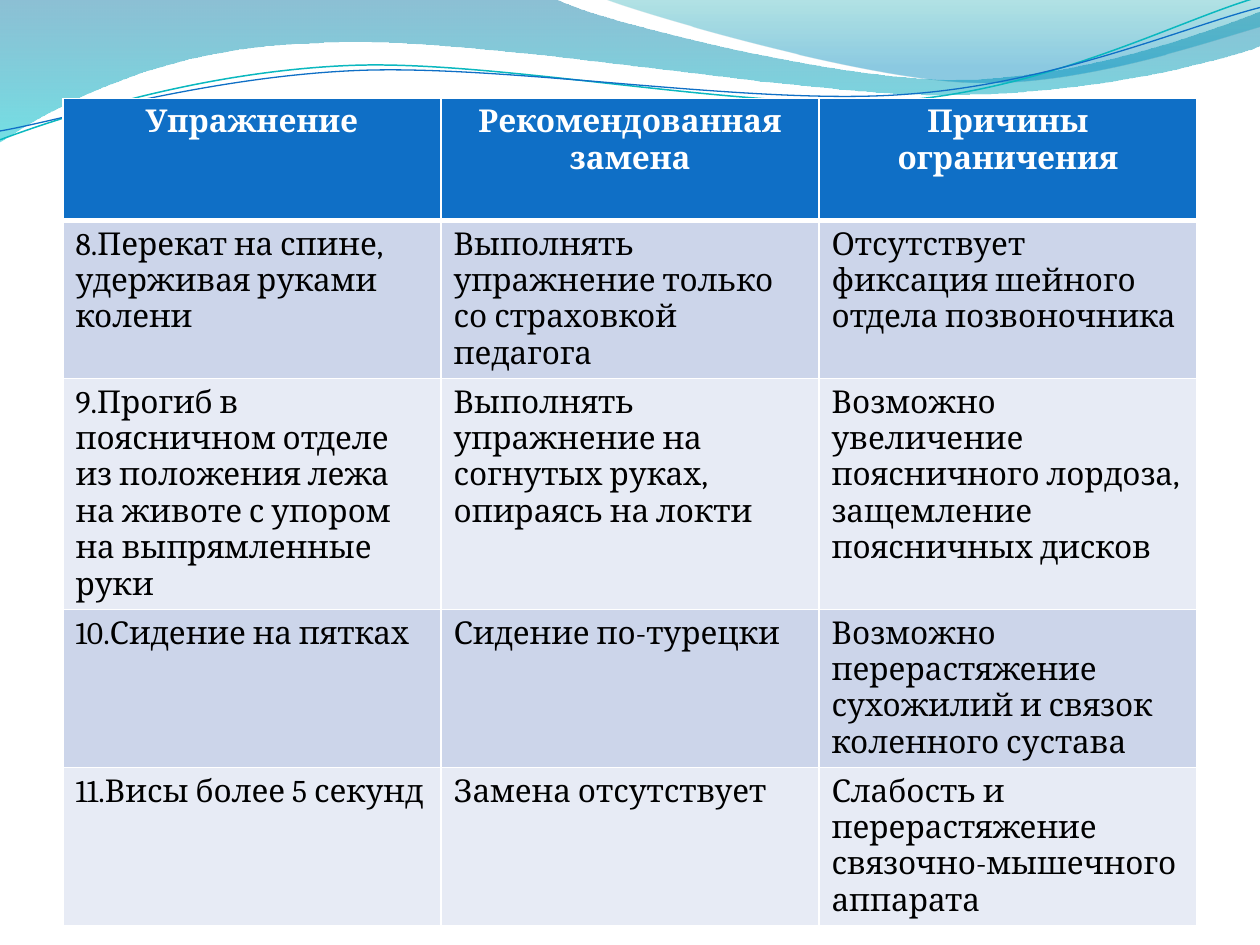
from math import cos, radians, sin

from lxml.etree import SubElement
from pptx import Presentation
from pptx.dml.color import RGBColor
from pptx.enum.text import PP_ALIGN
from pptx.oxml.ns import qn
from pptx.util import Inches, Pt

HEADINGS = ["Упражнение", "Рекомендованная замена", "Причины ограничения"]
EXERCISES = [
    ["8.Перекат на спине, удерживая руками колени",
     "Выполнять упражнение только со страховкой педагога",
     "Отсутствует фиксация шейного отдела позвоночника"],
    ["9.Прогиб в поясничном отделе из положения лежа на животе с упором на выпрямленные руки",
     "Выполнять упражнение на согнутых руках, опираясь на локти",
     "Возможно увеличение поясничного лордоза, защемление поясничных дисков"],
    ["10.Сидение на пятках", "Сидение по-турецки",
     "Возможно перерастяжение сухожилий и связок коленного сустава"],
    ["11.Висы более 5 секунд", "Замена отсутствует",
     "Слабость и перерастяжение связочно-мышечного аппарата"],
]
ROW_HEIGHTS = [0.97, 1.25, 1.83, 1.25, 1.25]

WIDE_WAVE = [[(0, 0)], [(4.4, -0.01)], [(4.76, 0.17), (6.64, 0.63), (7.58, 0.63)],
             [(8.53, 0.63), (9.58, 0.26), (10, 0.09)], [(10.01, 0.36)],
             [(9.83, 0.44), (8.7, 0.76), (7.46, 0.75)],
             [(6.22, 0.75), (3.82, 0.28), (2.57, 0.34)],
             [(1.29, 0.36), (0.46, 0.83), (-0.01, 1.13)], [(0, 0)]]
RIGHT_WAVE = [[(4.79, -0.01)], [(5.09, 0.11), (6.82, 0.62), (7.69, 0.65)],
              [(8.56, 0.69), (9.61, 0.32), (10, 0.21)], [(10, 0)], [(4.79, -0.01)]]
TEAL_CURVE = [[(0, 1.11)], [(0.48, 0.93), (1.58, 0.57), (2.77, 0.52)],
              [(3.95, 0.47), (5.93, 0.89), (7.13, 0.8)],
              [(8.33, 0.71), (9.38, 0.15), (9.98, -0.02)]]
BLUE_CURVE = [[(0, 1.04)], [(0.47, 0.96), (1.64, 0.61), (2.83, 0.56)],
              [(4.03, 0.51), (5.97, 0.84), (7.17, 0.75)],
              [(8.36, 0.67), (9.41, 0.21), (10, 0.06)]]


def color(value):
    return RGBColor.from_string(value)


def turn(segments, degrees, center):
    angle, (cx, cy) = radians(degrees), center
    return [[(cx + (x - cx) * cos(angle) - (y - cy) * sin(angle),
              cy + (x - cx) * sin(angle) + (y - cy) * cos(angle)) for x, y in segment]
            for segment in segments]


class WaveSlide:
    """Draws the wave header and the exercise table in one style."""

    font, size = "Cambria", 18
    accent, bands = "0F6FC6", ("CCD5EA", "E7EBF5")
    tilt = 2.7

    def __init__(self, slide):
        self.slide = slide

    def outline(self, segments, close):
        start, *ends = [(Inches(x), Inches(y)) for x, y in (part[-1] for part in segments)]
        builder = self.slide.shapes.build_freeform(*start)
        builder.add_line_segments(ends, close=close)
        outline = builder.convert_to_shape()
        outline.shadow.inherit = False
        lines = list(outline._element.spPr.iter(qn("a:lnTo")))
        for line, segment in zip(lines, segments[1:]):
            if len(segment) == 3:
                self.bend(line, segment, outline.left, outline.top)
        return outline

    def bend(self, line, segment, left, top):
        path = line.getparent()
        bend = SubElement(path, qn("a:cubicBezTo"))
        for x, y in segment:
            SubElement(bend, qn("a:pt"), x=str(Inches(x) - left), y=str(Inches(y) - top))
        path.replace(line, bend)

    def wave(self, segments, stops):
        wave = self.outline(segments, True)
        wave.line.fill.background()
        wave.fill.gradient()
        wave.fill.gradient_angle = 270
        for stop, (position, shade, _) in zip(wave.fill.gradient_stops, stops):
            stop.position = position
            stop.color.rgb = color(shade)
        shades = list(wave._element.spPr.iter(qn("a:srgbClr")))
        for shade, (_, _, opacity) in zip(shades, stops):
            SubElement(shade, qn("a:alpha")).set("val", str(opacity * 1000))

    def curve(self, segments, center, shade, width):
        curve = self.outline(turn(segments, self.tilt, center), False)
        curve.rotation = 360 - self.tilt
        curve.fill.background()
        curve.line.color.rgb = color(shade)
        curve.line.width = Pt(width)

    def borders(self, cell, bottom):
        properties = cell._tc.get_or_add_tcPr()
        for index, (side, width) in enumerate((("L", 1), ("R", 1), ("T", 1), ("B", bottom))):
            border = SubElement(properties, qn(f"a:ln{side}"), w=str(Pt(width)))
            fill = SubElement(border, qn("a:solidFill"))
            SubElement(fill, qn("a:srgbClr"), val="FFFFFF")
            properties.insert(index, border)

    def cell(self, cell, text, heading, shade):
        cell.fill.solid()
        cell.fill.fore_color.rgb = color(shade)
        self.borders(cell, 3 if heading else 1)
        cell.text_frame.text = text
        paragraph = cell.text_frame.paragraphs[0]
        paragraph.alignment = PP_ALIGN.CENTER if heading else PP_ALIGN.LEFT
        font = paragraph.runs[0].font
        font.name, font.size, font.bold = self.font, Pt(self.size), heading
        font.color.rgb = color("FFFFFF" if heading else "000000")

    def table(self, left, top, width, heights, rows):
        table = self.slide.shapes.add_table(
            len(rows), len(rows[0]), Inches(left), Inches(top),
            Inches(width), Inches(sum(heights))).table
        for number, (texts, height) in enumerate(zip(rows, heights)):
            table.rows[number].height = Inches(height)
            heading = number == 0
            shade = self.accent if heading else self.bands[(number - 1) % 2]
            for column, text in enumerate(texts):
                self.cell(table.cell(number, column), text, heading, shade)


def main():
    presentation = Presentation()
    presentation.slide_width, presentation.slide_height = Inches(10), Inches(7.5)
    page = WaveSlide(presentation.slides.add_slide(presentation.slide_layouts[6]))
    page.wave(WIDE_WAVE, [(0, "0074A1", 45), (1, "00C6CF", 55)])
    page.wave(RIGHT_WAVE, [(0, "00A1A9", 30), (0.8, "008BBF", 45)])
    page.curve(TEAL_CURVE, (4.99, 0.57), "0AB8BF", 0.85)
    page.curve(BLUE_CURVE, (5, 0.59), page.accent, 0.75)
    page.table(0.5, 0.78, 9, ROW_HEIGHTS, [HEADINGS, *EXERCISES])
    presentation.save("out.pptx")


if __name__ == "__main__":
    main()
